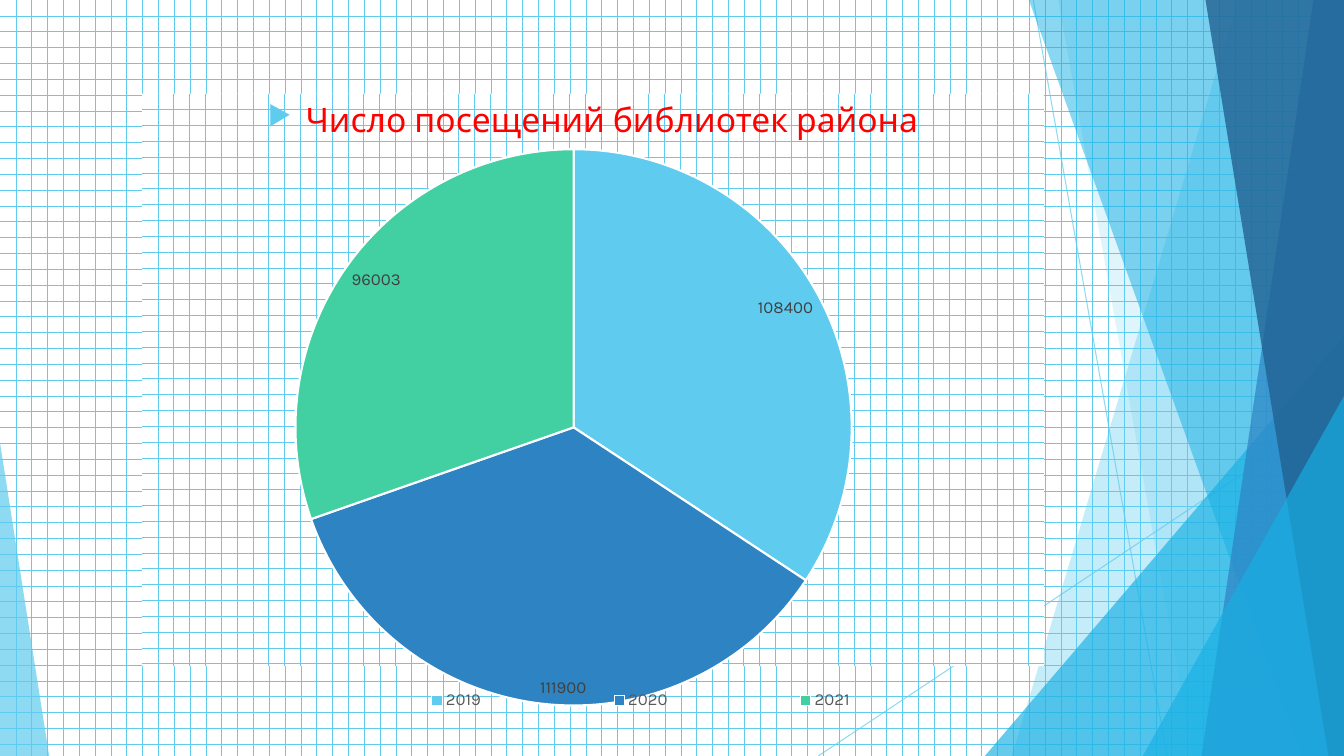
from dataclasses import dataclass
from typing import Any

from pptx import Presentation
from pptx.chart import data as chart_data
from pptx.dml.color import RGBColor
from pptx.enum import chart as chart_enum, dml, shapes, text
from pptx.oxml import parse_xml
from pptx.oxml.ns import nsdecls, qn
from pptx.util import Cm, Pt

WIDTH, HEIGHT = 33.87, 19.05
FONT = "Karla"
SKY = RGBColor(0x5F, 0xCB, 0xEF)
CYAN = RGBColor(0x17, 0xB0, 0xE4)
BLUE = RGBColor(0x2E, 0x83, 0xC3)
NAVY = RGBColor(0x22, 0x62, 0x92)
GREEN = RGBColor(0x42, 0xD0, 0xA2)
RED = RGBColor(0xFF, 0x00, 0x00)
WHITE = RGBColor(0xFF, 0xFF, 0xFF)
LEGEND_GRAY = RGBColor(0x59, 0x59, 0x59)
LABEL_GRAY = RGBColor(0x40, 0x40, 0x40)


@dataclass(frozen=True)
class Ray:
    start: tuple[float, float]
    end: tuple[float, float]


@dataclass(frozen=True)
class Band:
    top_left: float
    bottom_left: float
    color: RGBColor
    opacity: int


@dataclass(frozen=True)
class Corner:
    left: float
    top: float
    width: float
    apex: float
    color: RGBColor
    opacity: int


@dataclass(frozen=True)
class Sector:
    year: str
    visits: int
    color: RGBColor


RAYS = (
    Ray((26.04, 0), (29.41, HEIGHT)),
    Ray((WIDTH, 10.24), (20.62, HEIGHT)),
)
DECORATIONS = (
    Band(31.19, 25.5, SKY, 36),
    Band(26.67, 30.05, SKY, 20),
    Corner(24.82, 8.46, 9.05, 1, CYAN, 66),
    Band(25.93, 32.79, CYAN, 50),
    Band(33.1, 30.28, BLUE, 70),
    Band(30.38, 33.48, NAVY, 80),
    Corner(28.8, 9.98, 5.07, 1, CYAN, 66),
    Corner(0, 11.15, 1.24, 0, SKY, 70),
)
SECTORS = (
    Sector("2019", 108400, SKY),
    Sector("2020", 111900, BLUE),
    Sector("2021", 96003, GREEN),
)


def apply_format(target: Any, values: dict[str, Any]) -> None:
    for name, value in values.items():
        setattr(target, name, value)


def format_font(font: Any, size: float, color: RGBColor) -> None:
    apply_format(font, {"name": FONT, "size": Pt(size)})
    font.color.rgb = color


def set_opacity(shape: Any, percent: int) -> None:
    for color in shape._element.spPr.iter(qn("a:srgbClr")):
        color.append(parse_xml(f'<a:alpha {nsdecls("a")} val="{percent * 1000}"/>'))


def fill_grid(fill: Any) -> None:
    fill.patterned()
    fill.pattern = dml.MSO_PATTERN.DOTTED_GRID
    fill.fore_color.rgb = SKY
    fill.back_color.rgb = WHITE


def draw_ray(slide: Any, ray: Ray) -> None:
    points = [Cm(value) for value in (*ray.start, *ray.end)]
    connector = slide.shapes.add_connector(shapes.MSO_CONNECTOR.STRAIGHT, *points)
    connector.line.width = Pt(0.75)
    connector.line.color.rgb = SKY
    set_opacity(connector, 70)
    connector._element.spPr.append(parse_xml(f'<a:effectLst {nsdecls("a")}/>'))


def draw_decoration(slide: Any, item: Band | Corner) -> None:
    if isinstance(item, Band):
        builder = slide.shapes.build_freeform(Cm(item.top_left), 0)
        outline = ((WIDTH, 0), (WIDTH, HEIGHT), (item.bottom_left, HEIGHT))
        builder.add_line_segments([(Cm(x), Cm(y)) for x, y in outline])
        shape = builder.convert_to_shape()
    else:
        shape = slide.shapes.add_shape(
            shapes.MSO_SHAPE.ISOSCELES_TRIANGLE,
            Cm(item.left), Cm(item.top), Cm(item.width), Cm(HEIGHT - item.top),
        )
        shape.adjustments[0] = item.apex
    shape.shadow.inherit = False
    shape.fill.solid()
    shape.fill.fore_color.rgb = item.color
    shape.line.fill.background()
    set_opacity(shape, item.opacity)


def draw_heading(slide: Any) -> None:
    shape = slide.shapes.add_shape(
        shapes.MSO_SHAPE.RECTANGLE, Cm(3.58), Cm(2.36), Cm(22.73), Cm(14.43)
    )
    shape.shadow.inherit = False
    fill_grid(shape.fill)
    shape.line.fill.background()
    apply_format(
        shape.text_frame,
        {"word_wrap": True, "vertical_anchor": text.MSO_ANCHOR.TOP},
    )
    paragraph = shape.text_frame.paragraphs[0]
    apply_format(paragraph, {"alignment": text.PP_ALIGN.CENTER, "space_before": Pt(10)})
    run = paragraph.add_run()
    run.text = "Число посещений библиотек района"
    format_font(run.font, 24, RED)
    properties = paragraph._p.get_or_add_pPr()
    properties.set("marL", str(Cm(0.95)))
    properties.set("indent", str(Cm(-0.95)))
    for bullet in (
        f'<a:buClr {nsdecls("a")}><a:srgbClr val="{SKY}"/></a:buClr>',
        f'<a:buSzPct {nsdecls("a")} val="80000"/>',
        f'<a:buChar {nsdecls("a")} char="▶"/>',
    ):
        properties.append(parse_xml(bullet))


def make_layout(x: float, y: float, w: float, h: float, target: str = "") -> Any:
    modes = "".join(f'<c:{name}Mode val="edge"/>' for name in "xy")
    sizes = "".join(
        f'<c:{name} val="{value}"/>' for name, value in zip("xywh", (x, y, w, h))
    )
    return parse_xml(
        f'<c:layout {nsdecls("c")}><c:manualLayout>{target}{modes}{sizes}'
        "</c:manualLayout></c:layout>"
    )


def draw_chart(slide: Any) -> None:
    data = chart_data.CategoryChartData()
    data.categories = [sector.year for sector in SECTORS]
    data.add_series("Series 1", [sector.visits for sector in SECTORS])
    chart = slide.shapes.add_chart(
        chart_enum.XL_CHART_TYPE.PIE, Cm(3.15), Cm(3.43), Cm(22.61), Cm(15.62), data
    ).chart
    apply_format(chart, {"has_title": False, "has_legend": True})
    format_font(chart.font, 10, RGBColor(0, 0, 0))
    plot = chart.plots[0]
    apply_format(plot, {"vary_by_categories": True, "has_data_labels": True})
    for index, sector in enumerate(SECTORS):
        point = plot.series[0].points[index]
        point.format.fill.solid()
        point.format.fill.fore_color.rgb = sector.color
        point.format.line.width = Pt(1.5)
        point.format.line.color.rgb = WHITE
    apply_format(
        plot.data_labels,
        {"show_value": True, "position": chart_enum.XL_LABEL_POSITION.INSIDE_END},
    )
    format_font(plot.data_labels.font, 12, LABEL_GRAY)
    apply_format(
        chart.legend,
        {"position": chart_enum.XL_LEGEND_POSITION.BOTTOM, "include_in_layout": True},
    )
    format_font(chart.legend.font, 12, LEGEND_GRAY)
    area = chart._chartSpace.chart.plotArea
    for layout in area.findall(qn("c:layout")):
        area.remove(layout)
    area.insert(0, make_layout(0.19, 0.02, 0.62, 0.9, '<c:layoutTarget val="inner"/>'))
    legend = chart.legend._element
    for layout in legend.findall(qn("c:layout")):
        legend.remove(layout)
    legend.find(qn("c:overlay")).addprevious(make_layout(0.2, 0.88, 0.75, 0.06))


def main() -> None:
    presentation = Presentation()
    apply_format(presentation, {"slide_width": Cm(WIDTH), "slide_height": Cm(HEIGHT)})
    slide = presentation.slides.add_slide(presentation.slide_layouts[6])
    fill_grid(slide.background.fill)
    for ray in RAYS:
        draw_ray(slide, ray)
    for item in DECORATIONS:
        draw_decoration(slide, item)
    draw_heading(slide)
    draw_chart(slide)
    presentation.save("out.pptx")


if __name__ == "__main__":
    main()
